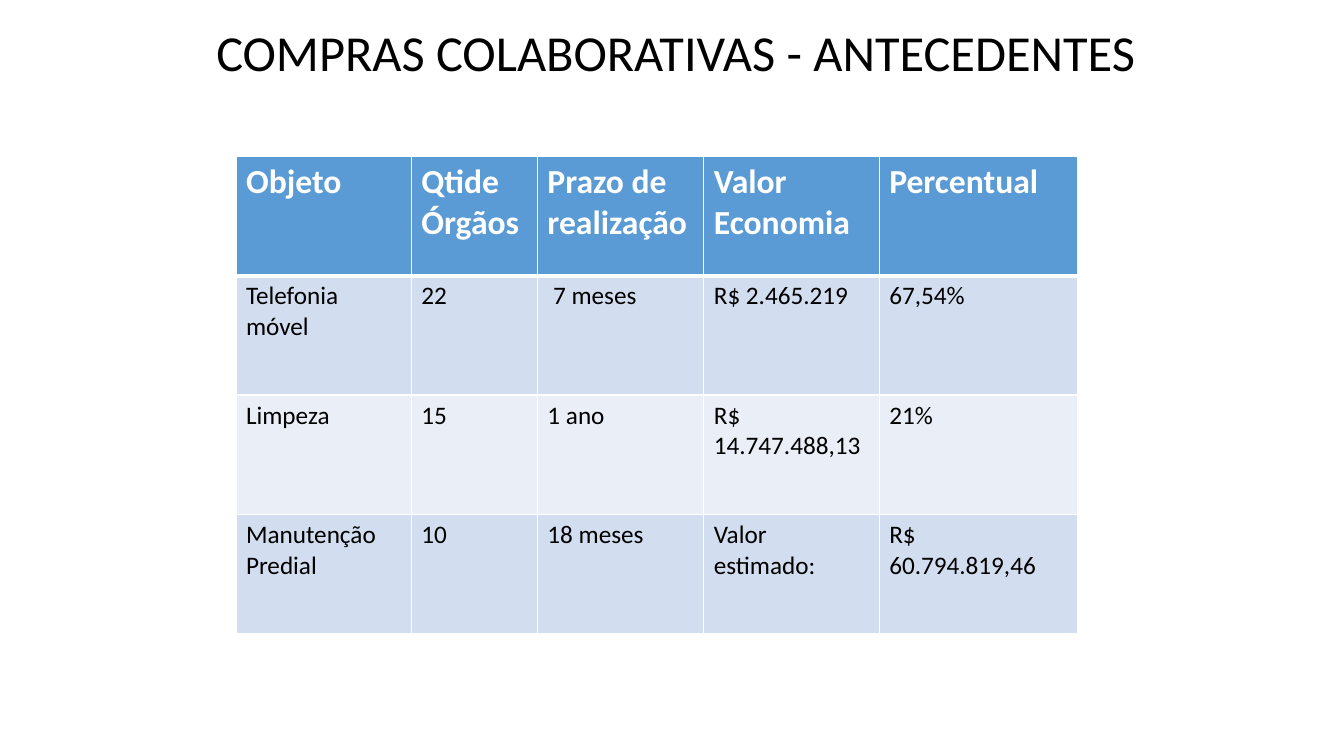
from lxml import etree
from pptx import Presentation
from pptx.dml.color import RGBColor
from pptx.enum import text
from pptx.oxml.ns import qn
from pptx.util import Inches, Pt

COLORS = {
    "title": "000000",
    "header": "5B9BD5",
    "odd_row": "D2DEEF",
    "even_row": "EAEFF7",
    "header_text": "FFFFFF",
    "body_text": "000000",
    "border": "FFFFFF",
}
TITLE_FONT = {"name": "Calibri", "size": Pt(36), "bold": False}
HEADER_FONT = {"name": "Calibri", "size": Pt(24), "bold": True}
BODY_FONT = {"name": "Calibri", "size": Pt(18), "bold": False}

COLUMN_WIDTHS = [1.74, 1.25, 1.65, 1.74, 1.97]
ROW_HEIGHT = 1.185
PURCHASES = [
    ["Objeto", "Qtide Órgãos", "Prazo de realização", "Valor Economia", "Percentual"],
    ["Telefonia móvel", "22", " 7 meses", "R$ 2.465.219", "67,54%"],
    ["Limpeza", "15", "1 ano", "R$ 14.747.488,13", "21%"],
    ["Manutenção Predial", "10", "18 meses", "Valor estimado:", "R$ 60.794.819,46"],
]


def rgb(key):
    return RGBColor.from_string(COLORS[key])


def format_font(font, values, color):
    for name, value in values.items():
        setattr(font, name, value)
    font.color.rgb = rgb(color)


def add_title(slide, wording):
    title = slide.shapes.title
    place = {"left": 1.98, "top": 0.16, "width": 9.45, "height": 0.78}
    for name, value in place.items():
        setattr(title, name, Inches(value))
    frame = title.text_frame
    frame.text = wording
    frame.word_wrap = True
    frame.auto_size = text.MSO_AUTO_SIZE.NONE
    frame.vertical_anchor = text.MSO_ANCHOR.MIDDLE
    heading = frame.paragraphs[0]
    heading.alignment = text.PP_ALIGN.CENTER
    heading.line_spacing = 0.9
    format_font(heading.runs[0].font, TITLE_FONT, "title")


def add_borders(cell, widths):
    """Draw the cell's sides; widths maps L, R, T, B (in this order) to points."""
    properties = cell._tc.get_or_add_tcPr()
    for side, width in widths.items():
        line = etree.SubElement(properties, qn(f"a:ln{side}"), w=str(Pt(width)))
        fill = etree.SubElement(line, qn("a:solidFill"))
        etree.SubElement(fill, qn("a:srgbClr"), val=COLORS["border"])


def format_cell(cell, row):
    is_header = row == 0
    add_borders(cell, {"L": 1, "R": 1, "T": 3 if row == 1 else 1, "B": 3 if is_header else 1})
    cell.fill.solid()
    cell.fill.fore_color.rgb = rgb("header" if is_header else "odd_row" if row % 2 else "even_row")
    format_font(
        cell.text_frame.paragraphs[0].runs[0].font,
        HEADER_FONT if is_header else BODY_FONT,
        "header_text" if is_header else "body_text",
    )


def add_purchases_table(slide):
    table = slide.shapes.add_table(
        len(PURCHASES), len(COLUMN_WIDTHS), Inches(2.34), Inches(1.55),
        Inches(sum(COLUMN_WIDTHS)), Inches(ROW_HEIGHT * len(PURCHASES)),
    ).table
    for column, width in zip(table.columns, COLUMN_WIDTHS):
        column.width = Inches(width)
    for row, purchase in enumerate(PURCHASES):
        table.rows[row].height = Inches(ROW_HEIGHT)
        for column, wording in enumerate(purchase):
            cell = table.cell(row, column)
            cell.text = wording
            format_cell(cell, row)


def main():
    presentation = Presentation()
    presentation.slide_width = Inches(13.33)
    presentation.slide_height = Inches(7.5)
    slide = presentation.slides.add_slide(presentation.slide_layouts[5])
    add_title(slide, "COMPRAS COLABORATIVAS - ANTECEDENTES")
    add_purchases_table(slide)
    presentation.save("out.pptx")


if __name__ == "__main__":
    main()
